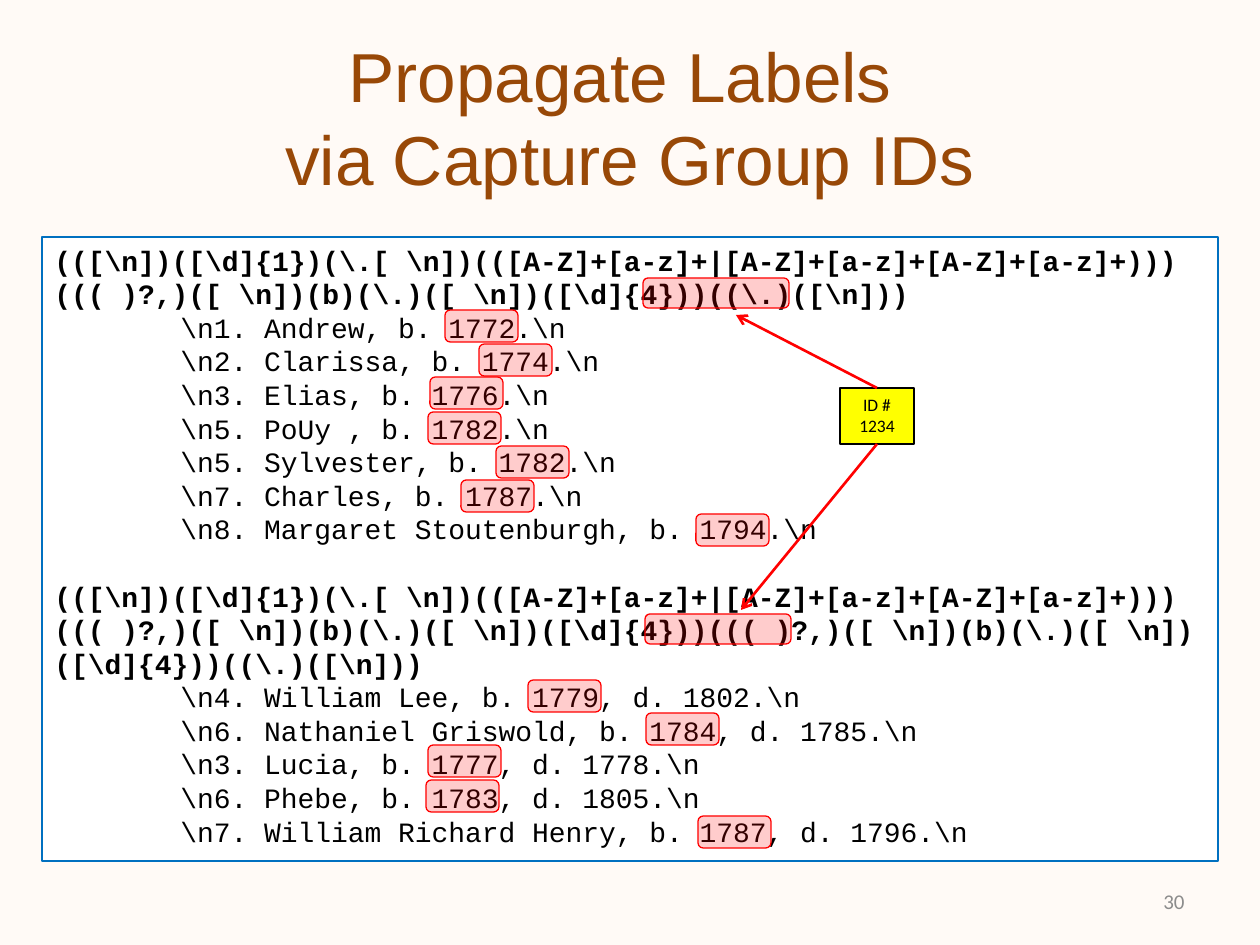
"""Build a slide on propagating labels through capture group IDs."""
from dataclasses import dataclass

from lxml import etree
from pptx import Presentation
from pptx.dml.color import RGBColor
from pptx.enum.shapes import MSO_CONNECTOR, MSO_SHAPE
from pptx.enum.text import MSO_ANCHOR, MSO_AUTO_SIZE, PP_ALIGN
from pptx.oxml.ns import qn
from pptx.util import Pt

ROUND = MSO_SHAPE.ROUNDED_RECTANGLE
STRAIGHT = MSO_CONNECTOR.STRAIGHT
LEFT, CENTER, RIGHT = PP_ALIGN.LEFT, PP_ALIGN.CENTER, PP_ALIGN.RIGHT
TOP, MIDDLE = MSO_ANCHOR.TOP, MSO_ANCHOR.MIDDLE
PX_PER_INCH = 126
TOP_SIDE, BOTTOM_SIDE = 0, 2


@dataclass(frozen=True)
class Theme:
    background: str = "FFFAF6"
    title: str = "984807"
    ink: str = "000000"
    muted: str = "8C8C8C"
    panel: str = "FFFFFF"
    panel_line: str = "0070C0"
    tag: str = "FFFF00"
    accent: str = "FF0000"
    head_font: str = "Arial"
    body_font: str = "Calibri"
    code_font: str = "Courier New"
    title_size: float = 39.6
    code_size: float = 16
    number_size: float = 12
    tag_size: float = 10
    gap: float = 19.2
    thin: float = 0.75
    thick: float = 1.5


ENTRY = r"(([\n])([\d]{1})(\.[ \n])(([A-Z]+[a-z]+|[A-Z]+[a-z]+[A-Z]+[a-z]+)))"
YEAR = r"((( )?,)([ \n])(b)(\.)([ \n])([\d]{4}))"
END = r"((\.)([\n]))"

GROUPS = [
    (ENTRY + YEAR + END, [
        r"\n1. Andrew, b. 1772.\n",
        r"\n2. Clarissa, b. 1774.\n",
        r"\n3. Elias, b. 1776.\n",
        r"\n5. PoUy , b. 1782.\n",
        r"\n5. Sylvester, b. 1782.\n",
        r"\n7. Charles, b. 1787.\n",
        r"\n8. Margaret Stoutenburgh, b. 1794.\n",
    ]),
    (ENTRY + YEAR + YEAR + END, [
        r"\n4. William Lee, b. 1779, d. 1802.\n",
        r"\n6. Nathaniel Griswold, b. 1784, d. 1785.\n",
        r"\n3. Lucia, b. 1777, d. 1778.\n",
        r"\n6. Phebe, b. 1783, d. 1805.\n",
        r"\n7. William Richard Henry, b. 1787, d. 1796.\n",
    ]),
]

YEAR_SPOTS = [
    (445, 310), (479, 344), (430, 377), (428, 412), (496, 446), (461, 480),
    (696, 514), (528, 680), (646, 713), (428, 745), (426, 780), (698, 816),
]
PATTERN_SPOTS = [(643, 278), (645, 614)]
ARROWS = [(TOP_SIDE, 736, 315), (BOTTOM_SIDE, 741, 610)]


def px(n):
    return round(n * 914400 / PX_PER_INCH)


def rgb(value):
    return RGBColor.from_string(value)


def write(p, text, *, size, font, color, bold=False, align=LEFT):
    p.alignment = align
    p._p.get_or_add_pPr().set("defTabSz", str(px(PX_PER_INCH)))
    for i, line in enumerate(text.split("\n")):
        if i:
            p.add_line_break()
        r = p.add_run()
        r.text = line
        r.font.size, r.font.name, r.font.bold = Pt(size), font, bold
        r.font.color.rgb = rgb(color)


class Deck:
    def __init__(self, theme):
        self.theme = theme
        self.prs = Presentation()
        self.prs.slide_width, self.prs.slide_height = px(1260), px(945)
        self.s = self.prs.slides.add_slide(self.prs.slide_layouts[6])
        fill = self.s.background.fill
        fill.solid()
        fill.fore_color.rgb = rgb(theme.background)

    def text_box(self, box, anchor):
        sp = self.s.shapes.add_textbox(*map(px, box))
        tf = sp.text_frame
        tf.word_wrap = True
        tf.auto_size = MSO_AUTO_SIZE.NONE
        tf.vertical_anchor = anchor
        return sp

    def paint(self, sp, fill, line):
        sp.fill.solid()
        sp.fill.fore_color.rgb = rgb(fill)
        sp.line.color.rgb = rgb(line)
        sp.line.width = Pt(self.theme.thin)

    def text(self, box, text, **fmt):
        sp = self.text_box(box, MIDDLE)
        write(sp.text_frame.paragraphs[0], text, **fmt)

    def code_panel(self, box, groups):
        t = self.theme
        sp = self.text_box(box, TOP)
        self.paint(sp, t.panel, t.panel_line)
        tf = sp.text_frame
        fmt = {"size": t.code_size, "font": t.code_font, "color": t.ink}
        p = tf.paragraphs[0]
        for i, (pattern, entries) in enumerate(groups):
            if i:
                p.space_after = Pt(t.gap)
                p = tf.add_paragraph()
            write(p, pattern, bold=True, **fmt)
            for entry in entries:
                p = tf.add_paragraph()
                write(p, "\t" + entry, **fmt)

    def tag(self, box, text):
        t = self.theme
        sp = self.text_box(box, TOP)
        self.paint(sp, t.tag, t.ink)
        write(sp.text_frame.paragraphs[0], text, size=t.tag_size,
              font=t.body_font, color=t.ink, align=CENTER)
        return sp

    def arrow(self, sp, side, x, y):
        cx = self.s.shapes.add_connector(STRAIGHT, px(x), px(y), px(x), px(y))
        cx.begin_connect(sp, side)
        cx.line.color.rgb = rgb(self.theme.accent)
        cx.line.width = Pt(self.theme.thick)
        etree.SubElement(cx.line._get_or_add_ln(), qn("a:tailEnd"), type="arrow")
        etree.SubElement(cx._element.spPr, qn("a:effectLst"))

    def highlights(self, spots, w, h):
        c = self.theme.accent
        for x, y in spots:
            sp = self.s.shapes.add_shape(ROUND, px(x), px(y), px(w), px(h))
            sp.shadow.inherit = False
            self.paint(sp, c, c)
            clr = sp._element.spPr.find(qn("a:solidFill")).find(qn("a:srgbClr"))
            etree.SubElement(clr, qn("a:alpha"), val="20000")


def main():
    t = Theme()
    deck = Deck(t)
    deck.text((63, 37, 1134, 158), "Propagate Labels \nvia Capture Group IDs",
              size=t.title_size, font=t.head_font, color=t.title, align=CENTER)
    deck.text((903, 876, 294, 50), "30", size=t.number_size,
              font=t.body_font, color=t.muted, align=RIGHT)
    deck.code_panel((42, 237, 1176, 624), GROUPS)
    tag = deck.tag((840, 388, 74, 56), "ID # 1234")
    for side, x, y in ARROWS:
        deck.arrow(tag, side, x, y)
    deck.highlights(PATTERN_SPOTS, 146, 30)
    deck.highlights(YEAR_SPOTS, 73, 32)
    deck.prs.save("out.pptx")


if __name__ == "__main__":
    main()
